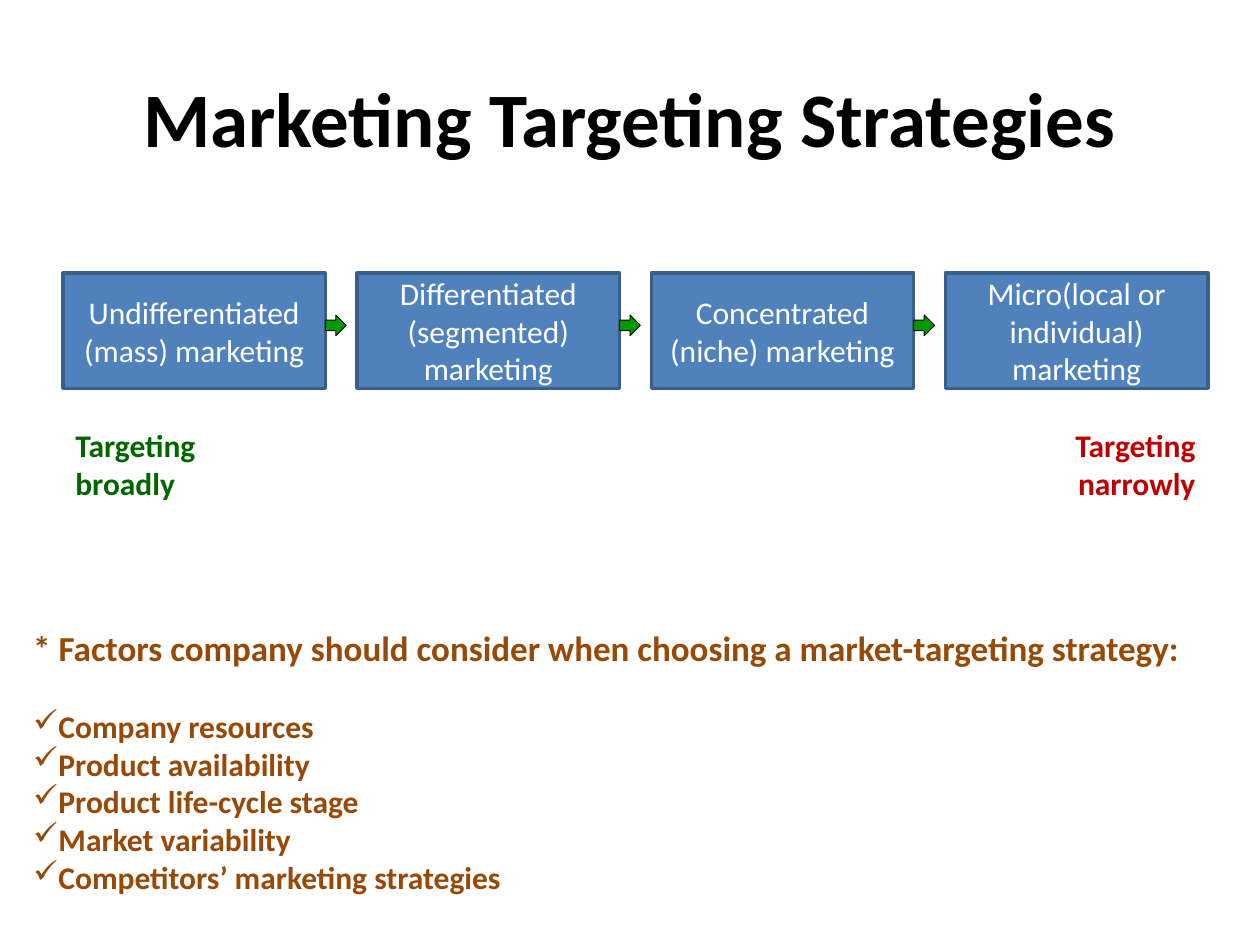
"""Build a slide on marketing targeting strategies, from broad to narrow."""
from dataclasses import dataclass

from lxml.etree import SubElement
from pptx import Presentation
from pptx.dml.color import RGBColor
from pptx.enum.shapes import MSO_SHAPE
from pptx.enum.text import MSO_ANCHOR, PP_ALIGN
from pptx.oxml.ns import qn
from pptx.util import Cm, Pt


@dataclass(frozen=True)
class Theme:
    font: str = "Calibri"
    title: str = "000000"
    box: str = "4F81BD"
    box_line: str = "3A5F8C"
    box_text: str = "FFFFFF"
    arrow: str = "009900"
    arrow_line: str = "000000"
    broad: str = "006600"
    narrow: str = "C00000"
    factors: str = "984807"
    title_size: int = 44
    heading_size: int = 20
    body_size: int = 18


theme = Theme()


def style_paragraph(paragraph, size, color, bold=True, alignment=PP_ALIGN.LEFT):
    paragraph.alignment = alignment
    for run in paragraph.runs:
        run.font.name = theme.font
        run.font.size = Pt(size)
        run.font.bold = bold
        run.font.color.rgb = RGBColor.from_string(color)


def add_filled_shape(kind, left, top, width, height, fill, line, line_width):
    shape = slide.shapes.add_shape(kind, Cm(left), Cm(top), Cm(width), Cm(height))
    shape.shadow.inherit = False
    shape.fill.solid()
    shape.fill.fore_color.rgb = RGBColor.from_string(fill)
    shape.line.color.rgb = RGBColor.from_string(line)
    shape.line.width = Pt(line_width)
    return shape


presentation = Presentation()
presentation.slide_width = Cm(25.4)
presentation.slide_height = Cm(19.05)
slide = presentation.slides.add_slide(presentation.slide_layouts[6])

title = slide.shapes.add_textbox(Cm(1.27), Cm(0.76), Cm(22.86), Cm(3.18))
title.text_frame.word_wrap = True
title.text_frame.vertical_anchor = MSO_ANCHOR.MIDDLE
title.text_frame.text = "Marketing Targeting Strategies"
style_paragraph(title.text_frame.paragraphs[0], theme.title_size, theme.title, alignment=PP_ALIGN.CENTER)

strategies = [
    "Undifferentiated (mass) marketing",
    "Differentiated (segmented) marketing",
    "Concentrated (niche) marketing",
    "Micro(local or individual) marketing",
]
row_left, row_top, box_width, box_height, pitch = 1.27, 5.5, 5.29, 2.33, 5.93
arrow_top, arrow_size = 6.35, 0.42

for index, strategy in enumerate(strategies):
    left = row_left + index * pitch
    box = add_filled_shape(MSO_SHAPE.RECTANGLE, left, row_top, box_width, box_height,
                           theme.box, theme.box_line, 2)
    box.text_frame.word_wrap = True
    box.text_frame.vertical_anchor = MSO_ANCHOR.MIDDLE
    box.text_frame.text = strategy
    style_paragraph(box.text_frame.paragraphs[0], theme.body_size, theme.box_text, False, PP_ALIGN.CENTER)

for index in range(len(strategies) - 1):
    left = row_left + index * pitch + box_width
    add_filled_shape(MSO_SHAPE.RIGHT_ARROW, left, arrow_top, arrow_size, arrow_size,
                     theme.arrow, theme.arrow_line, 0.5)

range_labels = [
    ("Targeting broadly", 1.27, theme.broad, PP_ALIGN.LEFT),
    ("Targeting narrowly", 21.17, theme.narrow, PP_ALIGN.RIGHT),
]
for text, left, color, alignment in range_labels:
    label = slide.shapes.add_textbox(Cm(left), Cm(8.47), Cm(3.18), Cm(1.8))
    label.text_frame.word_wrap = True
    label.text_frame.text = text
    style_paragraph(label.text_frame.paragraphs[0], theme.body_size, color, alignment=alignment)

factors = [
    "Company resources",
    "Product availability",
    "Product life-cycle stage",
    "Market variability",
    "Competitors’ marketing strategies",
]
factor_box = slide.shapes.add_textbox(Cm(0.42), Cm(12.5), Cm(24.98), Cm(5.74))
factor_frame = factor_box.text_frame
factor_frame.word_wrap = True
factor_frame.text = "* Factors company should consider when choosing a market-targeting strategy:"
heading = factor_frame.paragraphs[0]
heading.space_after = Pt(22)
style_paragraph(heading, theme.heading_size, theme.factors)

for factor in factors:
    paragraph = factor_frame.add_paragraph()
    paragraph.text = factor
    style_paragraph(paragraph, theme.body_size, theme.factors)
    properties = paragraph._p.get_or_add_pPr()
    properties.set("marL", str(Cm(0.51)))
    properties.set("indent", str(-Cm(0.51)))
    SubElement(properties, qn("a:buChar"), char="✓")

presentation.save("out.pptx")
